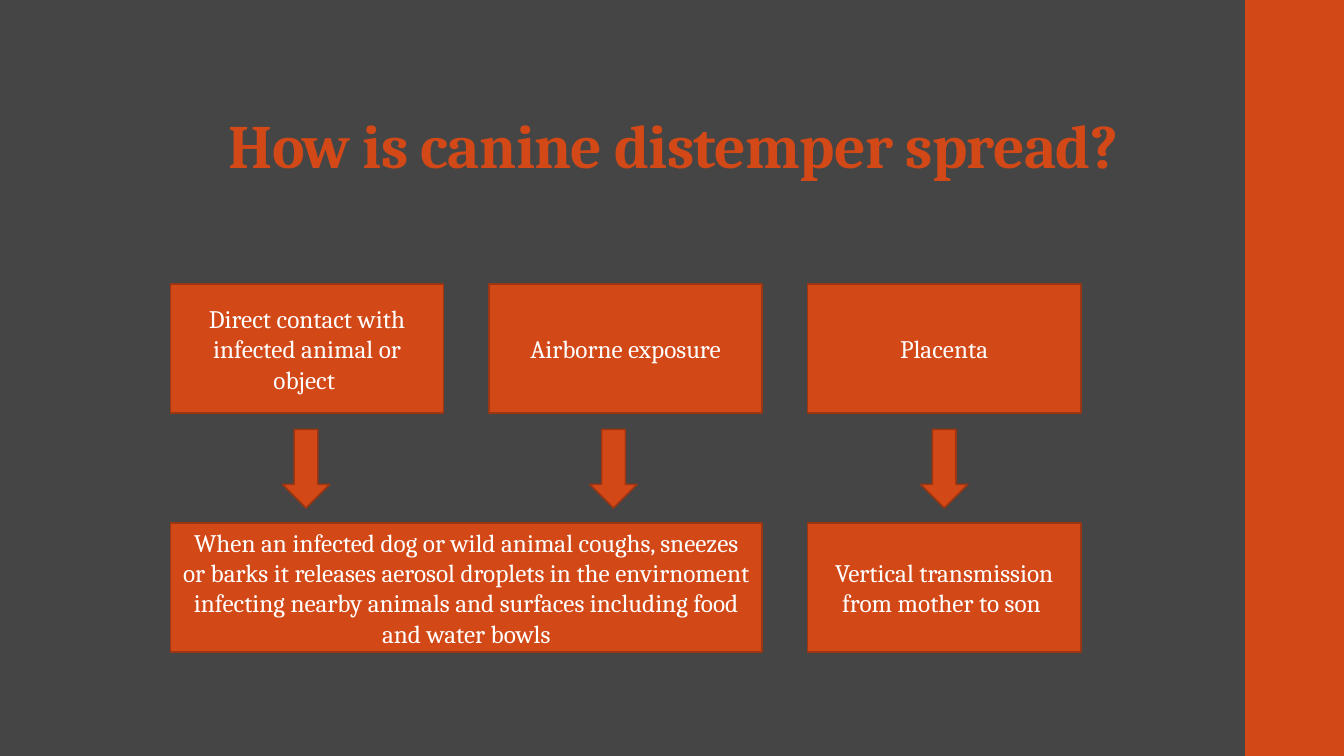
from dataclasses import dataclass

from pptx import Presentation
from pptx.dml.color import RGBColor
from pptx.enum.shapes import MSO_SHAPE
from pptx.enum.text import MSO_ANCHOR, PP_ALIGN
from pptx.util import Pt

RECT, DOWN_ARROW = MSO_SHAPE.RECTANGLE, MSO_SHAPE.DOWN_ARROW
MIDDLE, BOTTOM = MSO_ANCHOR.MIDDLE, MSO_ANCHOR.BOTTOM
CENTER = PP_ALIGN.CENTER
PX = 9144
SLIDE_W, SLIDE_H = 1333, 750

ROUTES = ["Direct contact with infected animal or object ", "Airborne exposure", "Placenta"]
OUTCOMES = [
    ("When an infected dog or wild animal coughs, sneezes or barks it releases "
     "aerosol droplets in the envirnoment infecting nearby animals and surfaces "
     "including food and water bowls", 0, 2),
    ("Vertical transmission from mother to son ", 2, 1),
]


@dataclass(frozen=True)
class Theme:
    """Colours, font and type sizes of the slide."""
    back: RGBColor = RGBColor.from_string("454545")
    accent: RGBColor = RGBColor.from_string("D34817")
    edge: RGBColor = RGBColor.from_string("9C3511")
    text: RGBColor = RGBColor.from_string("FFFFFF")
    font: str = "Cambria"
    title: int = 44
    body: int = 18
    line: float = 1.1


THEME = Theme()


def emu(*lengths):
    """Turn px lengths into EMU."""
    return [n * PX for n in lengths]


def add_text(sp, text, size, color, anchor, bold=False):
    """Write one centred paragraph and return it with its run."""
    tf = sp.text_frame
    tf.word_wrap = True
    tf.vertical_anchor = anchor
    p = tf.paragraphs[0]
    p.alignment = CENTER
    r = p.add_run()
    r.text = text
    r.font.name, r.font.size, r.font.bold = THEME.font, Pt(size), bold
    r.font.color.rgb = color
    return p, r


def add_block(s, kind, box, outlined=True):
    """Add an accent-filled shape."""
    sp = s.shapes.add_shape(kind, *emu(*box))
    sp.shadow.inherit = False
    sp.fill.solid()
    sp.fill.fore_color.rgb = THEME.accent
    if outlined:
        sp.line.color.rgb = THEME.edge
        sp.line.width = Pt(THEME.line)
    else:
        sp.line.fill.background()
    return sp


def add_title(s, box):
    """Add the bottom-anchored title."""
    sp = s.shapes.add_textbox(*emu(*box))
    p, r = add_text(sp, "How is canine distemper spread?", THEME.title, THEME.accent, BOTTOM, True)
    sp.text_frame.margin_top, sp.text_frame.margin_bottom = emu(3, 5)
    p.line_spacing = 0.9
    r.font._element.set("spc", "-50")


def add_flow(s, box):
    """Add the routes, their arrows and the outcomes."""
    x, y, w, h = box
    gap, box_h, arrow_w, arrow_h = 45, 128, 47, 78
    col_w = (w - 2 * gap) // 3
    pitch = col_w + gap
    arrow_offsets = (111, 416, 744)
    for i, (route, offset) in enumerate(zip(ROUTES, arrow_offsets)):
        sp = add_block(s, RECT, (x + i * pitch, y, col_w, box_h))
        add_text(sp, route, THEME.body, THEME.text, MIDDLE)
        add_block(s, DOWN_ARROW, (x + offset, y + 144, arrow_w, arrow_h))
    for outcome, col, span in OUTCOMES:
        outcome_w = span * pitch - gap
        sp = add_block(s, RECT, (x + col * pitch, y + h - box_h, outcome_w, box_h))
        add_text(sp, outcome, THEME.body, THEME.text, MIDDLE)


def build_slide(prs):
    """Add the slide with title, side band and flow."""
    s = prs.slides.add_slide(prs.slide_layouts[6])
    s.background.fill.solid()
    s.background.fill.fore_color.rgb = THEME.back
    add_title(s, (138, 32, 1060, 153))
    add_block(s, RECT, (1235, 0, SLIDE_W - 1235, SLIDE_H), outlined=False)
    add_flow(s, (169, 282, 903, 365))


def main():
    """Build and save the presentation."""
    prs = Presentation()
    prs.slide_width, prs.slide_height = emu(SLIDE_W, SLIDE_H)
    build_slide(prs)
    prs.save("out.pptx")


if __name__ == "__main__":
    main()
